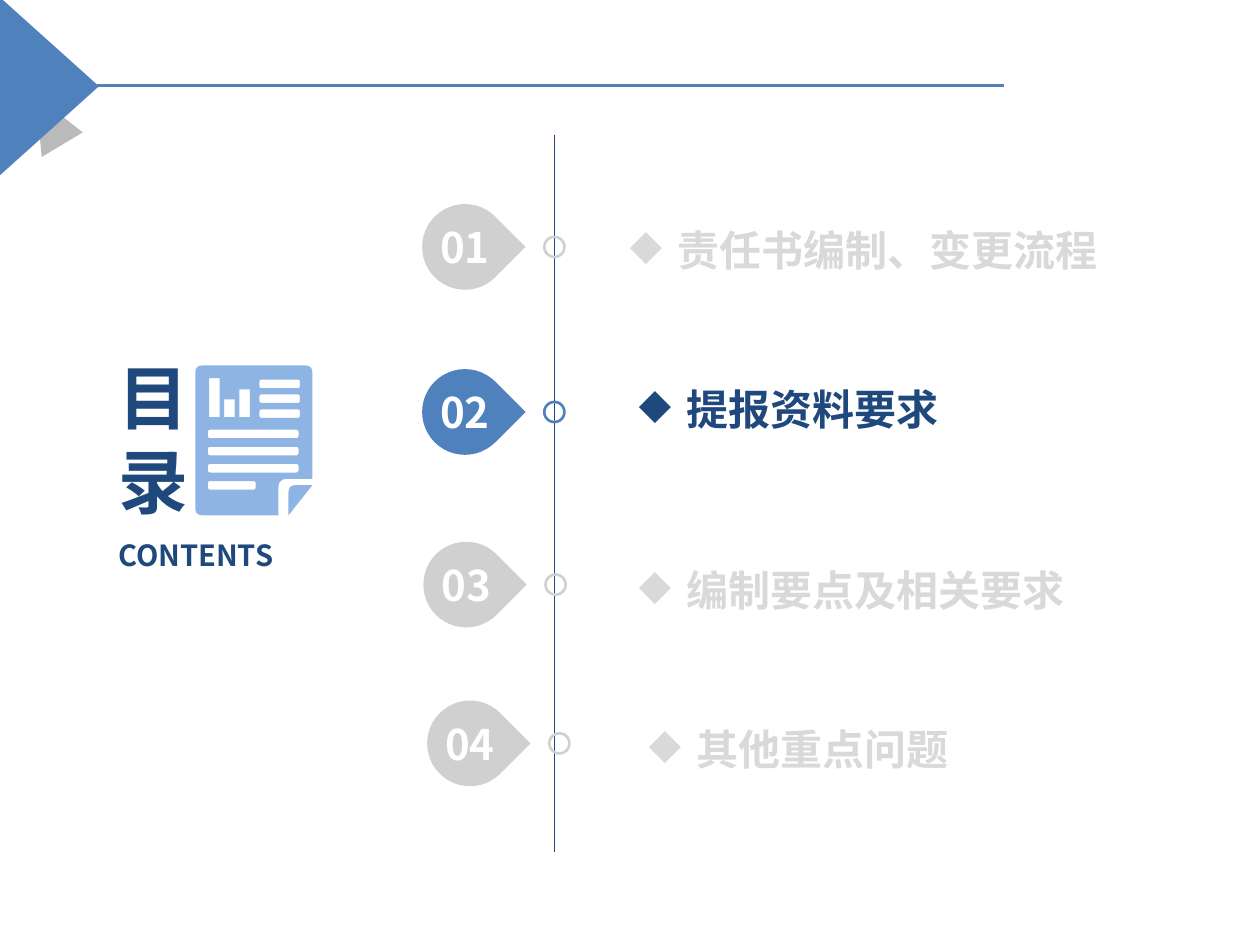
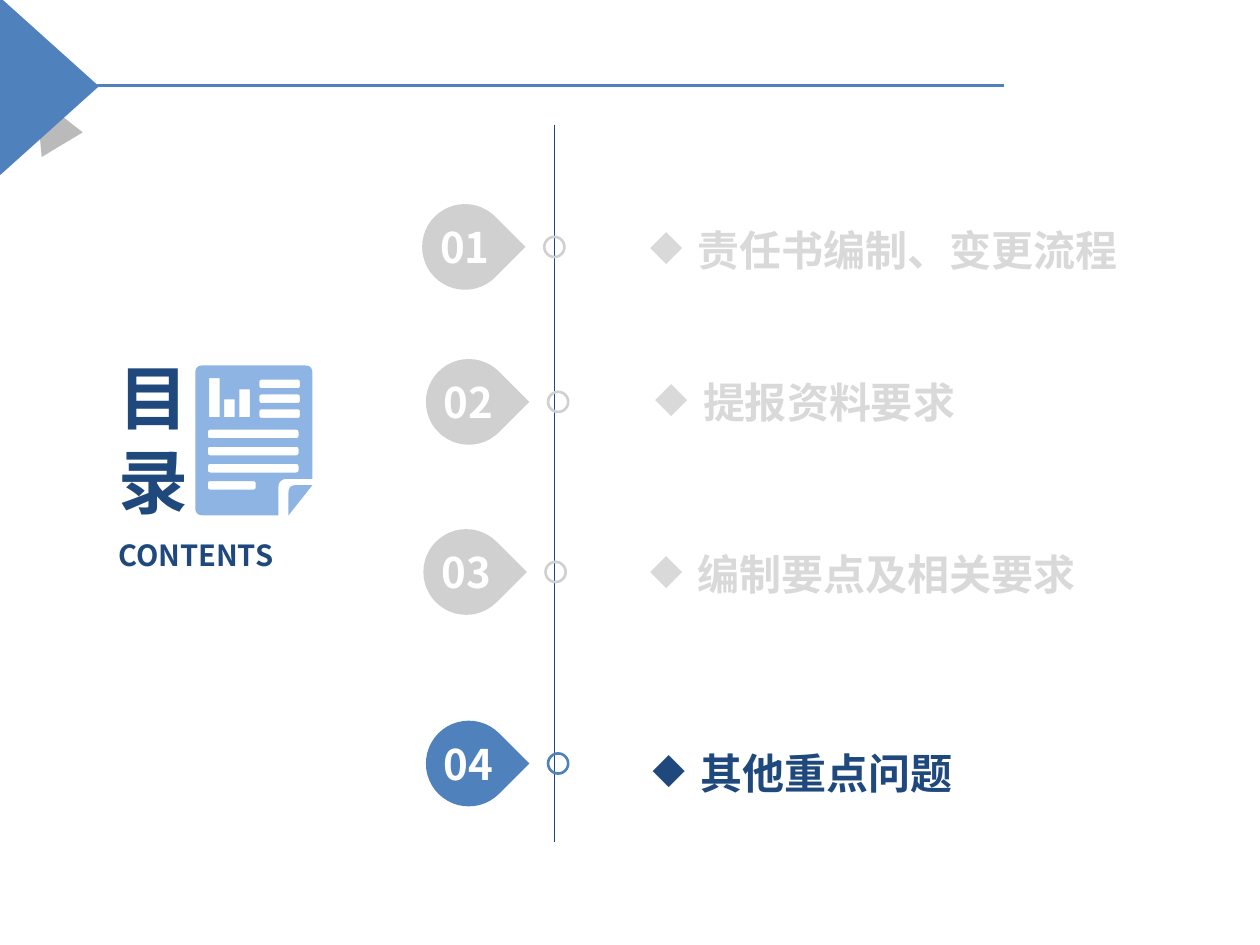
from dataclasses import dataclass

from lxml import etree
from pptx import Presentation
from pptx.dml.color import RGBColor
from pptx.enum.shapes import MSO_CONNECTOR, MSO_SHAPE
from pptx.enum.text import MSO_ANCHOR, MSO_AUTO_SIZE, PP_ALIGN
from pptx.oxml.ns import qn
from pptx.util import Inches, Pt


@dataclass(frozen=True)
class Theme:
    font: str = "Noto Sans CJK SC"
    white: str = "FFFFFF"
    blue: str = "4F81BD"
    navy: str = "1F497D"
    sky: str = "8EB4E3"
    shade: str = "404040"
    muted_marker: str = "D0D0D0"
    muted_text: str = "D9D9D9"
    title_size: float = 40
    title_leading: float = 48
    subtitle_size: float = 16.6
    item_size: float = 24


THEME = Theme()
COLUMNS = 100  # the 10 x 7.5 inch slide is 100 columns by 75 rows
ROWS = 75
ITEMS = ["责任书编制、变更流程", "提报资料要求", "编制要点及相关要求", "其他重点问题"]

# Each agenda: active item, top of the spine, then for every item
# the marker's (column, row) and the label's (column, bottom row).
AGENDAS = [
    (1, 10.7, [((33.5, 16.2), (50, 21.8)), ((33.5, 29.3), (50.7, 34.4)),
               ((33.6, 43), (50.7, 48.8)), ((33.9, 55.6), (51.5, 61.4))]),
    (3, 9.9, [((33.5, 16.2), (51.6, 21.8)), ((33.8, 28.5), (52, 33.9)),
              ((33.6, 42), (51.6, 47.5)), ((33.8, 57.2), (51.8, 63.3))]),
]


def grid(*cells):
    return [Inches(cell / 10) for cell in cells]


def apply_format(target, formats):
    for name, value in formats.items():
        setattr(target, name, value)


def color(value):
    return RGBColor.from_string(value)


def add_figure(shapes, kind, box, fill=None, line=None, rotation=0):
    shape = shapes.add_shape(kind, *grid(*box))
    shape.shadow.inherit = False
    shape.rotation = rotation
    paint(shape, fill, line)
    return shape


def paint(shape, fill=None, line=None):
    for part, value in ((shape.fill, fill), (shape.line.fill, line)):
        if value:
            part.solid()
            part.fore_color.rgb = color(value)
        else:
            part.background()
    if line:
        shape.line.width = Pt(1.5)


def add_rule(shapes, start, end, line, width):
    rule = shapes.add_connector(MSO_CONNECTOR.STRAIGHT, *grid(*start, *end))
    rule.line.color.rgb = color(line)
    rule.line.width = Pt(width)
    etree.SubElement(rule.element.spPr, qn("a:effectLst"))
    return rule


def write(shape, text, size, ink, anchor=MSO_ANCHOR.TOP, align=PP_ALIGN.LEFT,
          wrap=True, bullet=None, leading=None):
    frame = shape.text_frame
    apply_format(frame, dict(
        margin_left=0, margin_right=0, margin_top=0, margin_bottom=0,
        word_wrap=wrap, auto_size=MSO_AUTO_SIZE.NONE, vertical_anchor=anchor))
    paragraph = frame.paragraphs[0]
    apply_format(paragraph, dict(text=text, alignment=align))
    if leading:
        paragraph.line_spacing = Pt(leading)
    if bullet:
        properties = paragraph._p.get_or_add_pPr()
        indent = Inches(0.38)
        properties.set("marL", str(indent))
        properties.set("indent", str(-indent))
        etree.SubElement(properties, qn("a:buChar"), char=bullet)
    font = paragraph.runs[0].font
    apply_format(font, dict(name=THEME.font, size=Pt(size), bold=True))
    font.color.rgb = color(ink)
    etree.SubElement(font._element, qn("a:ea"), typeface=THEME.font)


def decorate_layout(layout, slide):
    """Draw the corner and header rule, then hand them to the layout."""
    shadow = add_figure(slide.shapes, MSO_SHAPE.ISOSCELES_TRIANGLE,
                        (1.9, 7.4, 3.8, 4.4), THEME.shade, rotation=329)
    shadow.adjustments[0] = 0.56
    shade = shadow.element.spPr.find(".//" + qn("a:srgbClr"))
    etree.SubElement(shade, qn("a:alpha"), val="36000")
    corner = add_figure(slide.shapes, MSO_SHAPE.ISOSCELES_TRIANGLE,
                        (-3.2, 2.9, 14.2, 7.9), THEME.blue, rotation=90)
    rule = add_rule(slide.shapes, (7.7, 6.8), (79.7, 6.8), THEME.blue, 2)
    for shape in (shadow, corner, rule):
        layout.shapes.element.append(shape.element)


def rounded_outline(corners, steps=5):
    """Turn (column, row, radius) corners into points with curved corners."""
    points = []
    for index, (x, y, radius) in enumerate(corners):
        if not radius:
            points.append((x, y))
            continue
        ends = []
        for near_x, near_y, _ in (corners[index - 1], corners[(index + 1) % len(corners)]):
            share = radius / max(abs(near_x - x), abs(near_y - y))
            ends.append((x + (near_x - x) * share, y + (near_y - y) * share))
        (x1, y1), (x2, y2) = ends
        for step in range(steps + 1):
            t = step / steps
            points.append(((1 - t) ** 2 * x1 + 2 * t * (1 - t) * x + t * t * x2,
                           (1 - t) ** 2 * y1 + 2 * t * (1 - t) * y + t * t * y2))
    return points


def bar(left, top, right, bottom, radius=0):
    return [(left, top, radius), (right, top, radius),
            (right, bottom, radius), (left, bottom, radius)]


def add_report_icon(shapes):
    page = [(15.5, 29, 0.6), (24.8, 29, 0.6), (24.8, 38, 0),
            (22.1, 38, 0.7), (22.1, 40.9, 0), (15.5, 40.9, 0.6)]
    fold = [(24.8, 38.5, 0), (22.9, 40.9, 0), (22.9, 38.5, 0.6)]
    chart_bars = [bar(left, top, left + 0.83, 33.1)
                  for left, top in ((16.6, 30), (17.8, 31.7), (19, 30.9))]
    short_lines = [bar(20.6, top, 23.8, top + 0.67, 0.15)
                   for top in (30.13, 31.31, 32.49)]
    long_lines = [bar(16.5, 34.1 + 1.36 * row, right, 34.78 + 1.36 * row, 0.2)
                  for row, right in enumerate((23.7, 23.7, 23.7, 20.3))]
    builder = None
    for corners in [page, fold, *chart_bars, *short_lines, *long_lines]:
        start, *rest = [grid(*point) for point in rounded_outline(corners)]
        if builder is None:
            builder = shapes.build_freeform(*start)
        else:
            builder.move_to(*start)
        builder.add_line_segments(rest)
    icon = builder.convert_to_shape()
    icon.shadow.inherit = False
    paint(icon, THEME.sky)


def add_contents_heading(slide):
    title = slide.shapes.title
    left, top, width, height = grid(9.4, 28.1, 4.9, 13.8)
    apply_format(title, dict(left=left, top=top, width=width, height=height))
    write(title, "目录", THEME.title_size, THEME.navy,
          align=PP_ALIGN.CENTER, leading=THEME.title_leading)
    subtitle = slide.shapes.add_textbox(*grid(9.4, 42.7, 15.4, 2.7))
    write(subtitle, "CONTENTS", THEME.subtitle_size, THEME.navy,
          MSO_ANCHOR.MIDDLE, PP_ALIGN.JUSTIFY)
    add_report_icon(slide.shapes)


def add_marker(slide, number, position, fill):
    column, row = position
    shapes = slide.shapes.add_group_shape().shapes
    add_figure(shapes, MSO_SHAPE.OVAL, (column + 9.7, row + 2.6, 1.6, 1.6), line=fill)
    add_figure(shapes, MSO_SHAPE.TEAR, (column, row, 6.8, 6.8), fill, rotation=45)
    disc = add_figure(shapes, MSO_SHAPE.OVAL,
                      (column + 0.15, row + 0.15, 6.5, 6.5), fill)
    write(disc, f"{number:02}", THEME.item_size, THEME.white,
          MSO_ANCHOR.MIDDLE, PP_ALIGN.CENTER, wrap=False)


def add_label(slide, text, position, ink):
    column, bottom = position
    label = slide.shapes.add_textbox(*grid(column, bottom - 4.8, 40, 4.8))
    write(label, text, THEME.item_size, ink, MSO_ANCHOR.BOTTOM, bullet="◆")


def add_agenda(slide, active, spine_top, places):
    add_contents_heading(slide)
    add_rule(slide.shapes, (44, spine_top), (44, spine_top + 56.9), THEME.navy, 0.75)
    for index, (text, (marker, label)) in enumerate(zip(ITEMS, places)):
        chosen = index == active
        add_marker(slide, index + 1, marker,
                   THEME.blue if chosen else THEME.muted_marker)
        add_label(slide, text, label, THEME.navy if chosen else THEME.muted_text)


def main():
    presentation = Presentation()
    presentation.slide_width, presentation.slide_height = grid(COLUMNS, ROWS)
    layout = presentation.slide_layouts.get_by_name("Title Only")
    slides = [presentation.slides.add_slide(layout) for _ in AGENDAS]
    decorate_layout(layout, slides[0])
    for slide, agenda in zip(slides, AGENDAS):
        add_agenda(slide, *agenda)
    presentation.save("out.pptx")


if __name__ == "__main__":
    main()
